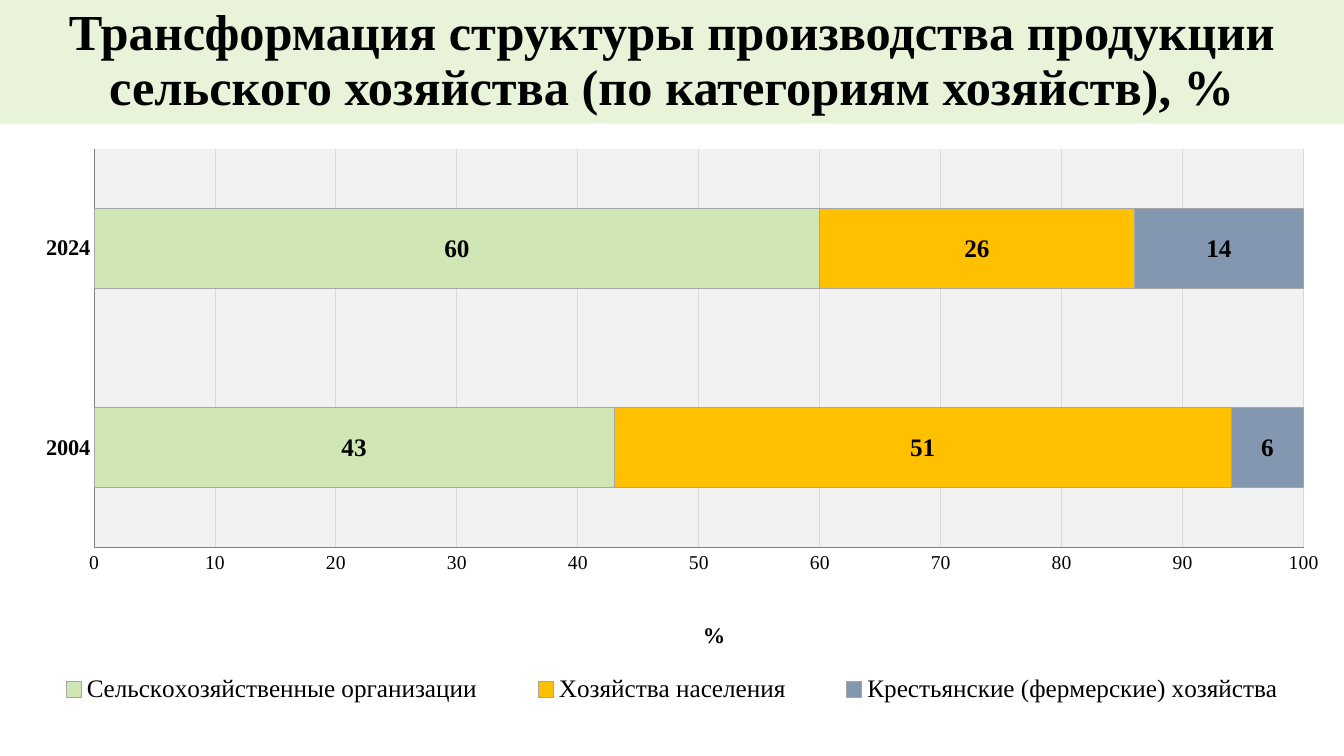
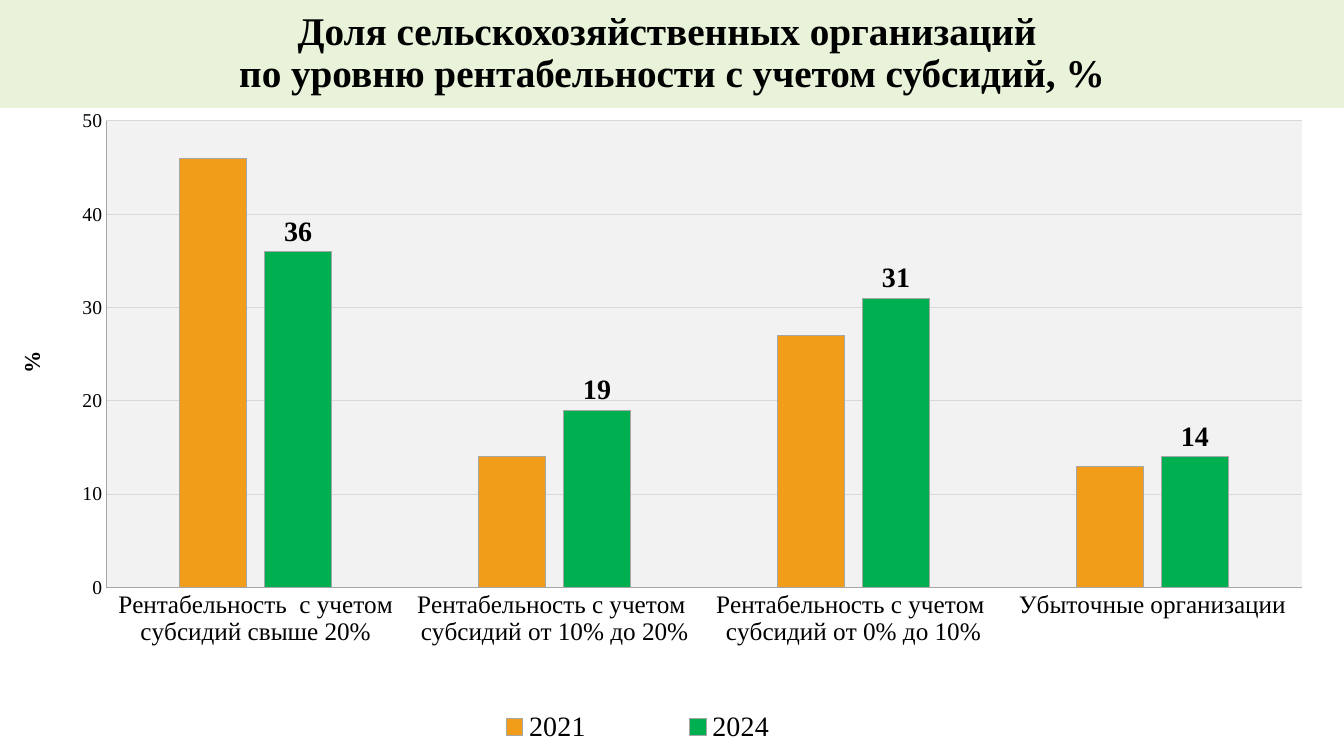
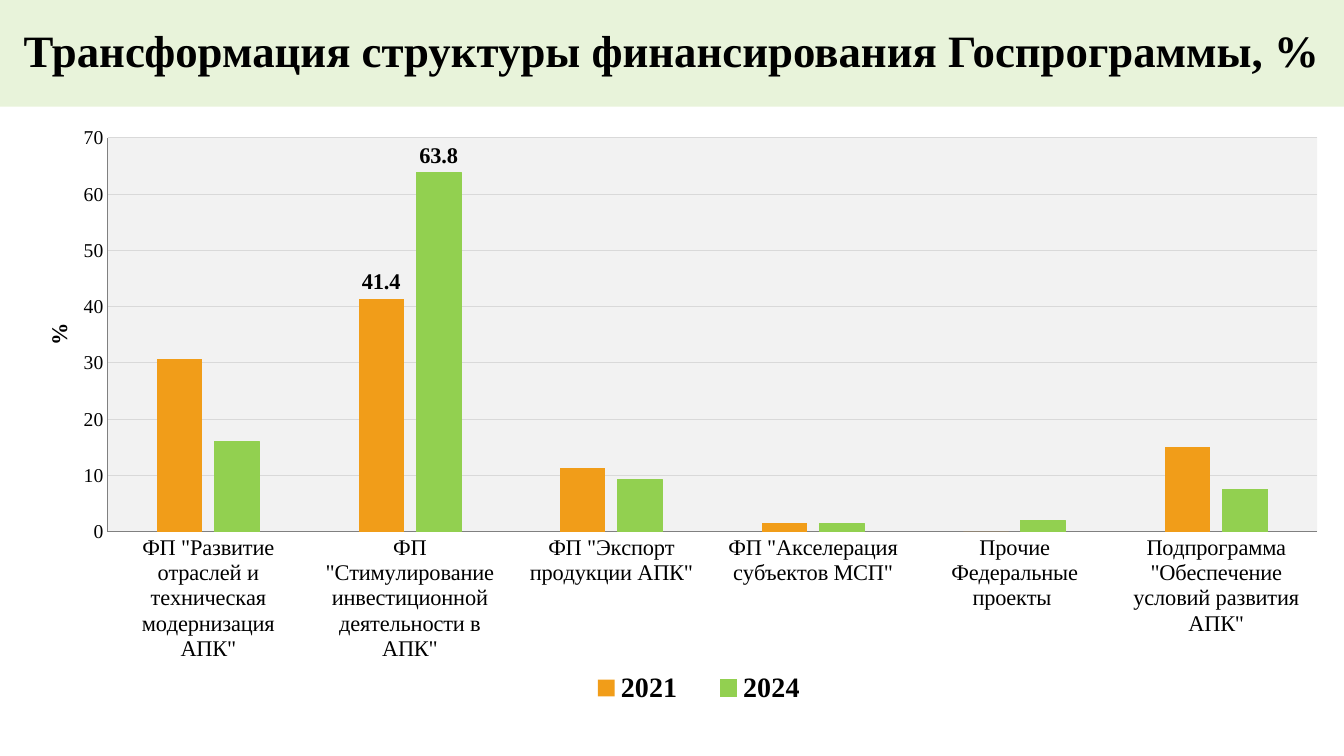
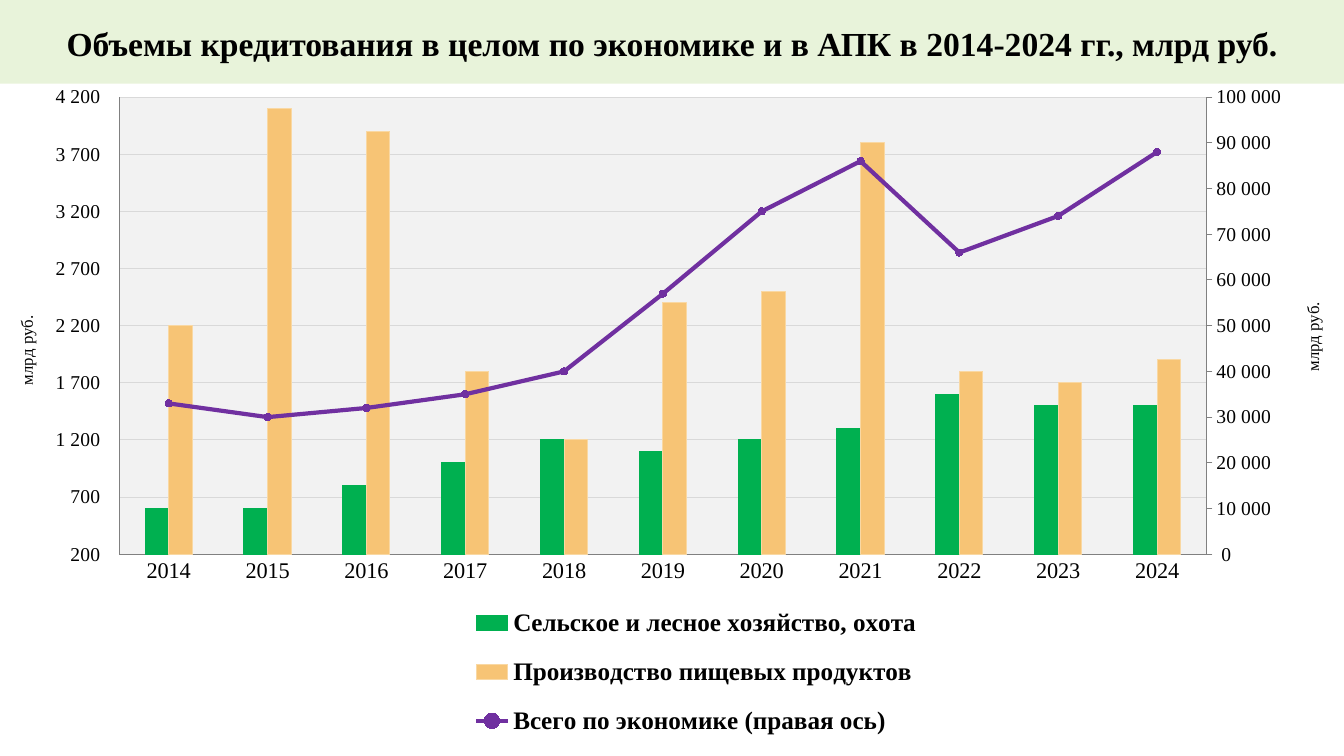
"""Four slides of charts on the structure, profitability, funding and lending of agriculture."""
from copy import deepcopy
from dataclasses import dataclass

from lxml.etree import SubElement
from pptx import Presentation
from pptx.chart.axis import CategoryAxis, ValueAxis
from pptx.chart.data import CategoryChartData
from pptx.dml.color import RGBColor
from pptx.enum.chart import XL_CHART_TYPE as ChartType
from pptx.enum.chart import XL_LABEL_POSITION as LabelPosition
from pptx.enum.chart import XL_LEGEND_POSITION as LegendPosition
from pptx.enum.chart import XL_MARKER_STYLE as MarkerStyle
from pptx.enum.chart import XL_TICK_MARK as TickMark
from pptx.enum.shapes import MSO_SHAPE as Preset
from pptx.enum.text import MSO_ANCHOR as Anchor
from pptx.enum.text import PP_ALIGN as Align
from pptx.oxml import parse_xml
from pptx.oxml.ns import nsdecls, qn
from pptx.util import Cm, Pt


@dataclass(frozen=True)
class Theme:
    font: str = "Times New Roman"
    text: str = "000000"
    band: str = "E8F3DA"
    plot: str = "F2F2F2"
    grid: str = "D9D9D9"
    axis: str = "808080"
    outline: str = "A6A6A6"
    pale_green: str = "D1E6B5"
    gold: str = "FFC000"
    slate: str = "8497B0"
    orange: str = "F19D19"
    green: str = "00B050"
    lime: str = "92D050"
    peach: str = "F7C475"
    peach_edge: str = "F9D8A3"
    purple: str = "7030A0"
    hairline: float = 0.75
    trend_line: float = 3
    small: int = 12
    tick: int = 14
    label: int = 16
    legend: int = 18
    large: int = 20


THEME = Theme()
WIDTH, HEIGHT = 33.87, 19.05


def set_font(font, size, bold=False):
    font.name, font.size, font.bold = THEME.font, Pt(size), bold
    font.color.rgb = RGBColor.from_string(THEME.text)


def write_text(frame, text, size, bold=False, align=Align.CENTER, spacing=None, after=None):
    paragraph = frame.paragraphs[0]
    paragraph.text = text
    paragraph.alignment = align
    if spacing:
        paragraph.line_spacing = spacing
    if after:
        paragraph.space_after = Pt(after)
    for run in paragraph.runs:
        set_font(run.font, size, bold)


def set_line(line, color, width=THEME.hairline):
    line.color.rgb = RGBColor.from_string(color)
    line.width = Pt(width)


def set_fill(fill, color):
    fill.solid()
    fill.fore_color.rgb = RGBColor.from_string(color)


def place(element, index, x, y, w=None, h=None, inner=False):
    for old in element.findall(qn("c:layout")):
        element.remove(old)
    layout = parse_xml(f"<c:layout {nsdecls('c')}><c:manualLayout/></c:layout>")
    settings = [("layoutTarget", "inner")] if inner else []
    settings += [("xMode", "edge"), ("yMode", "edge")]
    settings += [(key, str(part)) for key, part in zip("xywh", (x, y, w, h)) if part is not None]
    for tag, setting in settings:
        SubElement(layout[0], qn(f"c:{tag}")).set("val", setting)
    element.insert(index, layout)


def rotate(element, angle):
    body = element.find(".//" + qn("a:bodyPr"))
    body.set("rot", str(angle))
    body.set("vert", "horz")


def set_child(element, tag, setting):
    element.find(qn(f"c:{tag}")).set("val", setting)


class Deck:
    def __init__(self):
        self.show = Presentation()
        self.show.slide_width, self.show.slide_height = Cm(WIDTH), Cm(HEIGHT)
        self.slide = None
        self.top = 0

    def add_slide(self, title, band_height, size, spacing=0.9, after=None):
        self.slide = self.show.slides.add_slide(self.show.slide_layouts[6])
        self.top = band_height
        band = self.slide.shapes.add_shape(Preset.RECTANGLE, 0, 0, Cm(WIDTH), Cm(band_height))
        band.shadow.inherit = False
        set_fill(band.fill, THEME.band)
        band.line.fill.background()
        band.text_frame.word_wrap = True
        band.text_frame.vertical_anchor = Anchor.MIDDLE
        write_text(band.text_frame, title, size, True, spacing=spacing, after=after)

    def add_chart(self, kind, categories, series, plot_box, gap, overlap,
                  width=WIDTH, height=None, number_format="0"):
        figures = CategoryChartData(number_format="General")
        figures.categories = categories
        for name, values, *_ in series:
            figures.add_series(name, values)
        chart = self.slide.shapes.add_chart(
            kind, 0, Cm(self.top), Cm(width), Cm(height or HEIGHT - self.top), figures).chart
        chart.has_title = False
        set_font(chart.font, 10)
        plot = chart.plots[0]
        plot.gap_width, plot.overlap, plot.vary_by_categories = gap, overlap, False
        for drawn, (_, _, color, edge) in zip(plot.series, series):
            set_fill(drawn.format.fill, color)
            if edge:
                set_line(drawn.format.line, edge)
        area = chart._chartSpace.chart.plotArea
        place(area, 0, *plot_box, inner=True)
        area.append(parse_xml(
            f'<c:spPr {nsdecls("c", "a")}><a:solidFill><a:srgbClr val="{THEME.plot}"/>'
            "</a:solidFill></c:spPr>"))
        values = chart.value_axis
        values.has_major_gridlines = True
        set_line(values.major_gridlines.format.line, THEME.grid)
        values.tick_labels.number_format = number_format
        values.tick_labels.number_format_is_linked = False
        return chart

    def style_axes(self, chart, category_size, category_bold=False, line=THEME.axis):
        sizes = ((chart.category_axis, category_size, category_bold),
                 (chart.value_axis, THEME.tick, False))
        for axis, size, bold in sizes:
            axis.major_tick_mark = axis.minor_tick_mark = TickMark.NONE
            set_font(axis.tick_labels.font, size, bold)
            set_line(axis.format.line, line)
        rotate(chart.category_axis._element.find(qn("c:txPr")), -60000000)

    def title_axis(self, axis, text, x, y, size=THEME.label, bold=True, upright=False):
        write_text(axis.axis_title.text_frame, text, size, bold)
        title = axis.axis_title._element
        place(title, 1, x, y)
        rotate(title, 0 if upright else -5400000)

    def add_legend(self, chart, box, size, bold=False):
        chart.has_legend = True
        legend = chart.legend
        legend.position = LegendPosition.BOTTOM
        legend.include_in_layout = False
        set_font(legend.font, size, bold)
        place(legend._element, 1, *box)

    def label_series(self, series, position, size):
        labels = series.data_labels
        labels.show_value = True
        labels.position = position
        labels.number_format, labels.number_format_is_linked = "0", False
        set_font(labels.font, size, True)

    def label_point(self, series, index, size):
        series.data_labels.show_value = False
        label = series.points[index].data_label
        label.position = LabelPosition.OUTSIDE_END
        set_font(label.font, size, True)

    def move_to_right_axis(self, chart, color):
        columns = chart.plots[0]._element
        trend = columns.findall(qn("c:ser"))[-1]
        for tag in ("c:invertIfNegative", "c:spPr"):
            for part in trend.findall(qn(tag)):
                trend.remove(part)
        lines = parse_xml(
            f'<c:lineChart {nsdecls("c")}><c:grouping val="standard"/><c:varyColors val="0"/>'
            '<c:marker val="1"/><c:axId val="5001"/><c:axId val="5002"/></c:lineChart>')
        lines.insert(2, trend)
        columns.addnext(lines)

        left, bottom = chart.value_axis._element, chart.category_axis._element
        right, hidden = deepcopy(left), deepcopy(bottom)
        left.addnext(right)
        right.addnext(hidden)
        for axis, own, other in ((hidden, "5001", "5002"), (right, "5002", "5001")):
            set_child(axis, "axId", own)
            set_child(axis, "crossAx", other)
        set_child(right, "axPos", "r")
        set_child(right, "crosses", "max")
        CategoryAxis(hidden).visible = False
        right_axis = ValueAxis(right)
        right_axis.has_major_gridlines = False
        right_axis.minimum_scale, right_axis.maximum_scale = 0, 100000
        right_axis.major_tick_mark = TickMark.OUTSIDE

        total = chart.plots[1].series[0]
        total.smooth = False
        set_line(total.format.line, color, THEME.trend_line)
        total.marker.style, total.marker.size = MarkerStyle.CIRCLE, 5
        set_fill(total.marker.format.fill, color)
        set_line(total.marker.format.line, color)
        return right_axis


def add_production(deck):
    deck.add_slide("Трансформация структуры производства продукции "
                   "сельского хозяйства (по категориям хозяйств), %", 3.12, 36)
    chart = deck.add_chart(
        ChartType.BAR_STACKED, ["2004", "2024"],
        [("Сельскохозяйственные организации", [43, 60], THEME.pale_green, THEME.outline),
         ("Хозяйства населения", [51, 26], THEME.gold, THEME.outline),
         ("Крестьянские (фермерские) хозяйства", [6, 14], THEME.slate, THEME.outline)],
        (0.07, 0.04, 0.9, 0.63), 150, 100)
    deck.style_axes(chart, THEME.label, True)
    chart.value_axis.maximum_scale = 100
    deck.title_axis(chart.value_axis, "%", 0.52, 0.78, upright=True)
    deck.add_legend(chart, (0.01, 0.86, 0.98, 0.07), THEME.legend)
    for group in chart.plots[0].series:
        deck.label_series(group, LabelPosition.CENTER, THEME.legend)


def add_profitability(deck):
    deck.add_slide("Доля сельскохозяйственных организаций \v"
                   "по уровню рентабельности с учетом субсидий, %", 2.72, 28)
    chart = deck.add_chart(
        ChartType.COLUMN_CLUSTERED,
        ["Рентабельность  с учетом субсидий свыше 20%",
         "Рентабельность с учетом  субсидий от 10% до 20%",
         "Рентабельность с учетом  субсидий от 0% до 10%",
         "Убыточные организации"],
        [("2021", [46, 14, 27, 13], THEME.orange, THEME.outline),
         ("2024", [36, 19, 31, 14], THEME.green, THEME.outline)],
        (0.08, 0.02, 0.9, 0.72), 219, -27, width=33.48)
    deck.style_axes(chart, THEME.legend, line=THEME.outline)
    chart.value_axis.major_unit = 10
    deck.title_axis(chart.value_axis, "%", 0.01, 0.37)
    deck.add_legend(chart, (0.31, 0.92, 0.34, 0.07), THEME.large)
    deck.label_series(chart.plots[0].series[1], LabelPosition.OUTSIDE_END, THEME.large)


def add_funding(deck):
    deck.add_slide("Трансформация структуры финансирования Госпрограммы, %", 2.69, 32)
    chart = deck.add_chart(
        ChartType.COLUMN_CLUSTERED,
        ['ФП "Развитие отраслей и техническая модернизация АПК"',
         'ФП "Стимулирование инвестиционной деятельности в АПК"',
         'ФП "Экспорт продукции АПК"',
         'ФП "Акселерация субъектов МСП"',
         "Прочие Федеральные проекты ",
         'Подпрограмма "Обеспечение условий развития АПК"'],
        [("2021", [30.7, 41.4, 11.3, 1.6, 0, 15], THEME.orange, None),
         ("2024", [16, 63.8, 9.2, 1.5, 1.9, 7.5], THEME.lime, THEME.lime)],
        (0.08, 0.05, 0.9, 0.63), 219, -27, height=15.75)
    deck.style_axes(chart, THEME.label)
    deck.title_axis(chart.value_axis, "%", 0.03, 0.34)
    deck.add_legend(chart, (0.42, 0.9, 0.2, 0.06), THEME.large, True)
    for year in chart.plots[0].series:
        deck.label_point(year, 1, THEME.label)


def add_lending(deck):
    deck.add_slide("Объемы кредитования в целом по экономике и в АПК в 2014-2024 гг., млрд руб.",
                   2.11, 24, spacing=1.07, after=8)
    chart = deck.add_chart(
        ChartType.COLUMN_CLUSTERED, [str(year) for year in range(2014, 2025)],
        [("Сельское и лесное хозяйство, охота",
          [600, 600, 800, 1000, 1200, 1100, 1200, 1300, 1600, 1500, 1500],
          THEME.green, THEME.green),
         ("Производство пищевых продуктов",
          [2200, 4100, 3900, 1800, 1200, 2400, 2500, 3800, 1800, 1700, 1900],
          THEME.peach, THEME.peach_edge),
         ("Всего по экономике (правая ось)",
          [33000, 30000, 32000, 35000, 40000, 57000, 75000, 86000, 66000, 74000, 88000],
          THEME.purple, THEME.purple)],
        (0.09, 0.02, 0.82, 0.68), 219, 0, width=33.45, number_format="#\\ ##0\\ _₽")
    deck.style_axes(chart, THEME.label)
    left = chart.value_axis
    left.minimum_scale, left.maximum_scale = 200, 4200
    unit = "млрд руб."
    deck.title_axis(left, unit, 0.01, 0.34, THEME.small, False)
    right = deck.move_to_right_axis(chart, THEME.purple)
    deck.title_axis(right, unit, 0.98, 0.32, THEME.small, False)
    deck.add_legend(chart, (0.33, 0.75, 0.39, 0.25), THEME.legend, True)


def main():
    deck = Deck()
    for add_topic in (add_production, add_profitability, add_funding, add_lending):
        add_topic(deck)
    deck.show.save("out.pptx")


if __name__ == "__main__":
    main()
